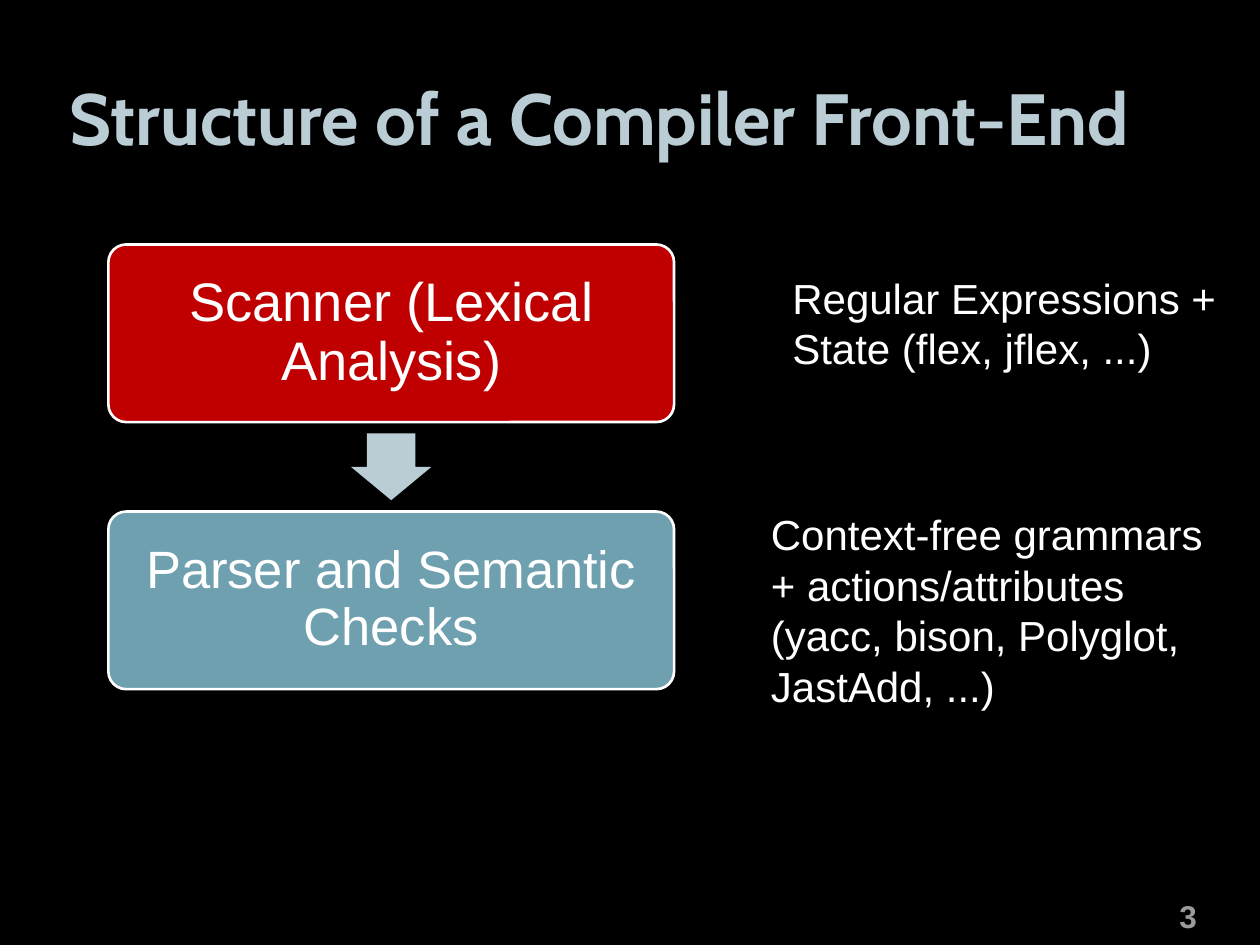
from pptx import Presentation
from pptx.dml.color import RGBColor
from pptx.enum.shapes import MSO_SHAPE as Shape
from pptx.enum.text import MSO_ANCHOR as Anchor, MSO_AUTO_SIZE as AutoSize, PP_ALIGN as Align
from pptx.util import Inches, Pt


def color(hex_code):
    return RGBColor.from_string(hex_code)


def write(frame, text, size, hex_code, align=Align.LEFT, font="Arial", bold=False,
          anchor=Anchor.TOP, margins=(0.1, 0.05), spacing=1.0):
    frame.text = text
    frame.word_wrap = True
    frame.auto_size = AutoSize.NONE
    frame.vertical_anchor = anchor
    frame.margin_left = frame.margin_right = Inches(margins[0])
    frame.margin_top = frame.margin_bottom = Inches(margins[1])
    for paragraph in frame.paragraphs:
        paragraph.alignment = align
        paragraph.line_spacing = spacing
        for run in paragraph.runs:
            run.font.name = font
            run.font.size = Pt(size)
            run.font.bold = bold
            run.font.color.rgb = color(hex_code)


prs = Presentation()
prs.slide_width, prs.slide_height = Inches(10), Inches(7.5)
slide = prs.slides.add_slide(prs.slide_layouts[5])
slide.background.fill.solid()
slide.background.fill.fore_color.rgb = color("000000")

title = slide.shapes.title
title.left, title.top, title.width, title.height = Inches(0.5), Inches(0.3), Inches(9), Inches(1.25)
write(title.text_frame, "Structure of a Compiler Front-End", 41.4, "BACDD4",
      font="Cabin", bold=True, anchor=Anchor.MIDDLE, margins=(0.05, 0.05))

stage_left, stage_width, stage_height = 0.86, 4.49, 1.41
stages = [
    ("Scanner (Lexical Analysis)", 1.94, "C00000", 31),
    ("Parser and Semantic Checks", 4.06, "6EA0B0", 30),
]
for label, top, fill, size in stages:
    stage = slide.shapes.add_shape(Shape.ROUNDED_RECTANGLE, Inches(stage_left), Inches(top),
                                   Inches(stage_width), Inches(stage_height))
    stage.adjustments[0] = 0.1
    stage.shadow.inherit = False
    stage.fill.solid()
    stage.fill.fore_color.rgb = color(fill)
    stage.line.color.rgb = color("FFFFFF")
    stage.line.width = Pt(1.5)
    write(stage.text_frame, label, size, "FFFFFF", Align.CENTER,
          anchor=Anchor.MIDDLE, margins=(0.09, 0.09), spacing=0.9)

arrow_width, arrow_height = 0.64, 0.53
arrow_left = stage_left + (stage_width - arrow_width) / 2
arrow_top = (stages[0][1] + stage_height + stages[1][1] - arrow_height) / 2
arrow = slide.shapes.add_shape(Shape.DOWN_ARROW, Inches(arrow_left), Inches(arrow_top),
                               Inches(arrow_width), Inches(arrow_height))
arrow.adjustments[0], arrow.adjustments[1] = 0.6, 0.5
arrow.shadow.inherit = False
arrow.fill.solid()
arrow.fill.fore_color.rgb = color("BACDD4")
arrow.line.fill.background()

tools = [
    ("Regular Expressions +\nState (flex, jflex, ...)", 6.19, 2.11, 0.91),
    ("Context-free grammars + actions/attributes (yacc, bison, Polyglot, JastAdd, ...)",
     6.02, 3.99, 1.72),
]
for text, left, top, height in tools:
    note = slide.shapes.add_textbox(Inches(left), Inches(top), Inches(3.7), Inches(height))
    write(note.text_frame, text, 24, "FFFFFF")

page_number = slide.shapes.add_textbox(Inches(8.67), Inches(7.02), Inches(0.83), Inches(0.4))
write(page_number.text_frame, "3", 18, "9D9B9A", Align.RIGHT, bold=True,
      anchor=Anchor.BOTTOM, margins=(0, 0))

prs.save("out.pptx")
